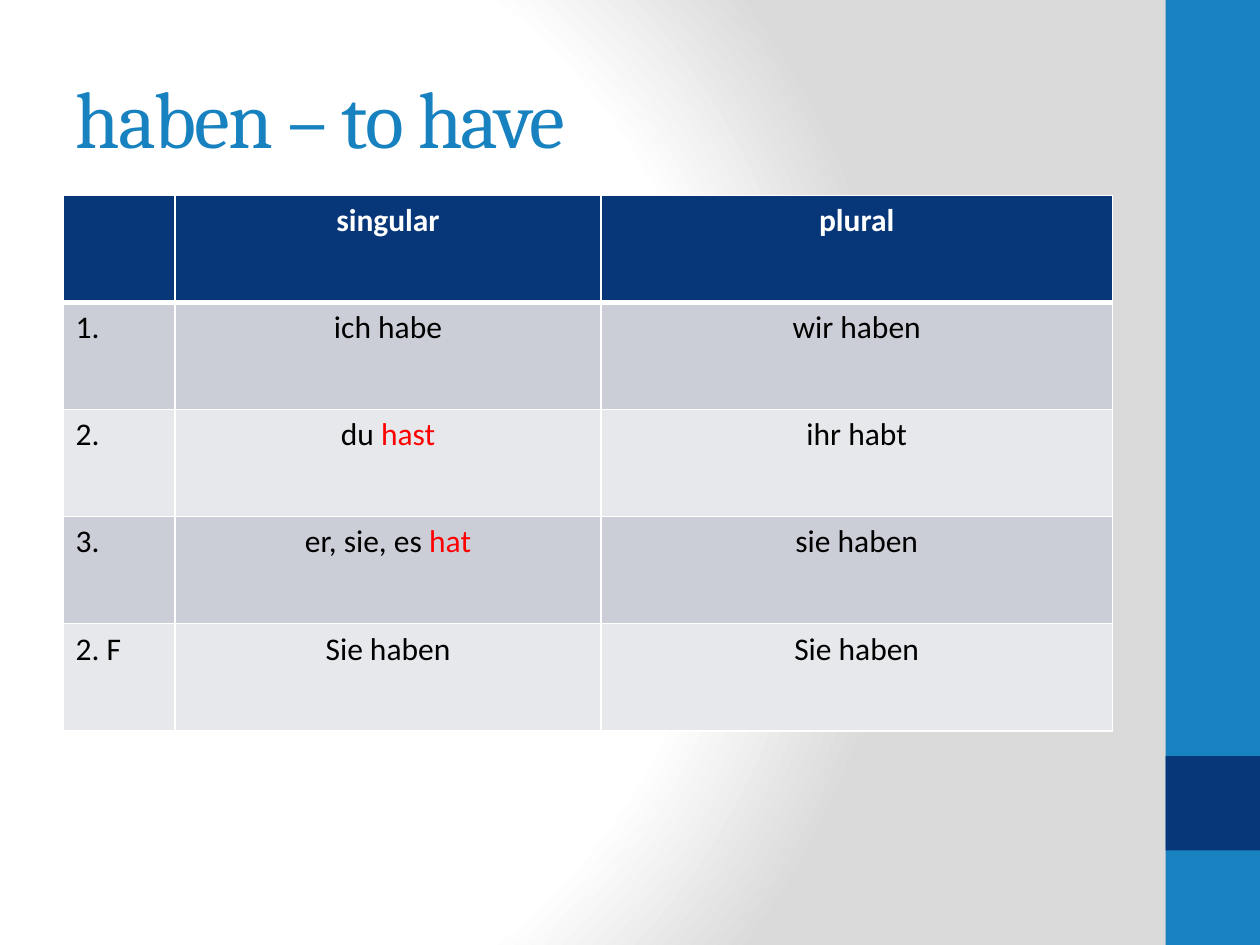
import pptx
import pptx.dml.color
import pptx.enum.shapes
import pptx.enum.text
import pptx.oxml
import pptx.oxml.ns
import pptx.util

COLOURS = {
    "blue": "1782BF", "navy": "073779", "white": "FFFFFF", "grey": "DADADA",
    "black": "000000", "red": "FF0000", "band": "CCCED7", "light": "E7E8EC",
}
UNIT = 0.25
NAMESPACE = pptx.oxml.ns.nsdecls("a")
CENTER = pptx.enum.text.PP_ALIGN.CENTER
LEFT = pptx.enum.text.PP_ALIGN.LEFT
COLUMN_WIDTHS = [3.56, 13.52, 16.24]
ROW_HEIGHT = 3.4
CONJUGATION = [
    [[], ["singular"], ["plural"]],
    [["1."], ["ich habe"], ["wir haben"]],
    [["2."], ["du ", "hast"], ["ihr habt"]],
    [["3."], ["er, sie, es ", "hat"], ["sie haben"]],
    [["2. F"], ["Sie haben"], ["Sie haben"]],
]


class GridSlide:
    """Draws styled elements on a slide divided into quarter-inch units."""

    def __init__(self, deck):
        self.slide = deck.slides.add_slide(deck.slide_layouts[6])

    def length(self, units):
        return pptx.util.Inches(units * UNIT)

    def colour(self, name):
        return pptx.dml.color.RGBColor.from_string(COLOURS[name])

    def background(self, stops, focus):
        self.slide.background.fill.gradient()
        gradient = self.slide.element.find(".//" + pptx.oxml.ns.qn("a:gradFill"))
        stop_list = "".join(
            f'<a:gs pos="{share * 1000}"><a:srgbClr val="{COLOURS[name]}"/></a:gs>'
            for share, name in stops)
        edges = " ".join(f'{side}="{share * 1000}"' for side, share in zip("ltrb", focus))
        gradient.getparent().replace(gradient, pptx.oxml.parse_xml(
            f'<a:gradFill {NAMESPACE} rotWithShape="1"><a:gsLst>{stop_list}</a:gsLst>'
            f'<a:path path="circle"><a:fillToRect {edges}/></a:path></a:gradFill>'))

    def block(self, left, top, width, height, fill):
        box = self.slide.shapes.add_shape(
            pptx.enum.shapes.MSO_SHAPE.RECTANGLE,
            *map(self.length, (left, top, width, height)))
        box.shadow.inherit = False
        box.fill.solid()
        box.fill.fore_color.rgb = self.colour(fill)
        box.line.fill.background()

    def span(self, para, text, size, font, colour, bold=False):
        span = para.add_run()
        span.text = text
        span.font.size = pptx.util.Pt(size)
        span.font.name = font
        span.font.bold = bold
        span.font.color.rgb = self.colour(colour)
        return span

    def title(self, left, top, width, height, text):
        box = self.slide.shapes.add_textbox(*map(self.length, (left, top, width, height)))
        frame = box.text_frame
        frame.word_wrap = True
        frame.vertical_anchor = pptx.enum.text.MSO_ANCHOR.MIDDLE
        span = self.span(frame.paragraphs[0], text, 46, "Cambria", "blue")
        span.font._element.set("spc", "-100")

    def borders(self, cell, **widths):
        properties = cell._tc.get_or_add_tcPr()
        for side in "LRTB":
            width = pptx.util.Pt(widths.get(side, 1))
            properties.append(pptx.oxml.parse_xml(
                f'<a:ln{side} {NAMESPACE} w="{width}"><a:solidFill>'
                f'<a:srgbClr val="{COLOURS["white"]}"/></a:solidFill></a:ln{side}>'))

    def cell(self, cell, words, row, column):
        header = row == 0
        self.borders(cell, T=3 if row == 1 else 1, B=3 if header else 1)
        cell.fill.solid()
        fill = "navy" if header else ("light", "band")[row % 2]
        cell.fill.fore_color.rgb = self.colour(fill)
        para = cell.text_frame.paragraphs[0]
        para.alignment = CENTER if column else LEFT
        for position, word in enumerate(words):
            colour = "white" if header else ("black", "red")[position]
            self.span(para, word, 18, "Calibri", colour, header)

    def table(self, left, top, widths, row_height, rows):
        size = (sum(widths), row_height * len(rows))
        table = self.slide.shapes.add_table(
            len(rows), len(widths), *map(self.length, (left, top, *size))).table
        for column, width in zip(table.columns, widths):
            column.width = self.length(width)
        for row, entries in enumerate(rows):
            table.rows[row].height = self.length(row_height)
            for column, words in enumerate(entries):
                self.cell(table.cell(row, column), words, row, column)


def main():
    deck = pptx.Presentation()
    deck.slide_width = pptx.util.Inches(10)
    deck.slide_height = pptx.util.Inches(7.5)
    page = GridSlide(deck)
    page.background([(0, "white"), (75, "white"), (100, "grey")], (20, 50, 100, 50))
    page.block(37, 0, 3, 30, "blue")
    page.block(37, 24, 3, 3, "navy")
    page.title(2, 1.2, sum(COLUMN_WIDTHS), 5, "haben – to have")
    page.table(2, 6.2, COLUMN_WIDTHS, ROW_HEIGHT, CONJUGATION)
    deck.save("out.pptx")


if __name__ == "__main__":
    main()
